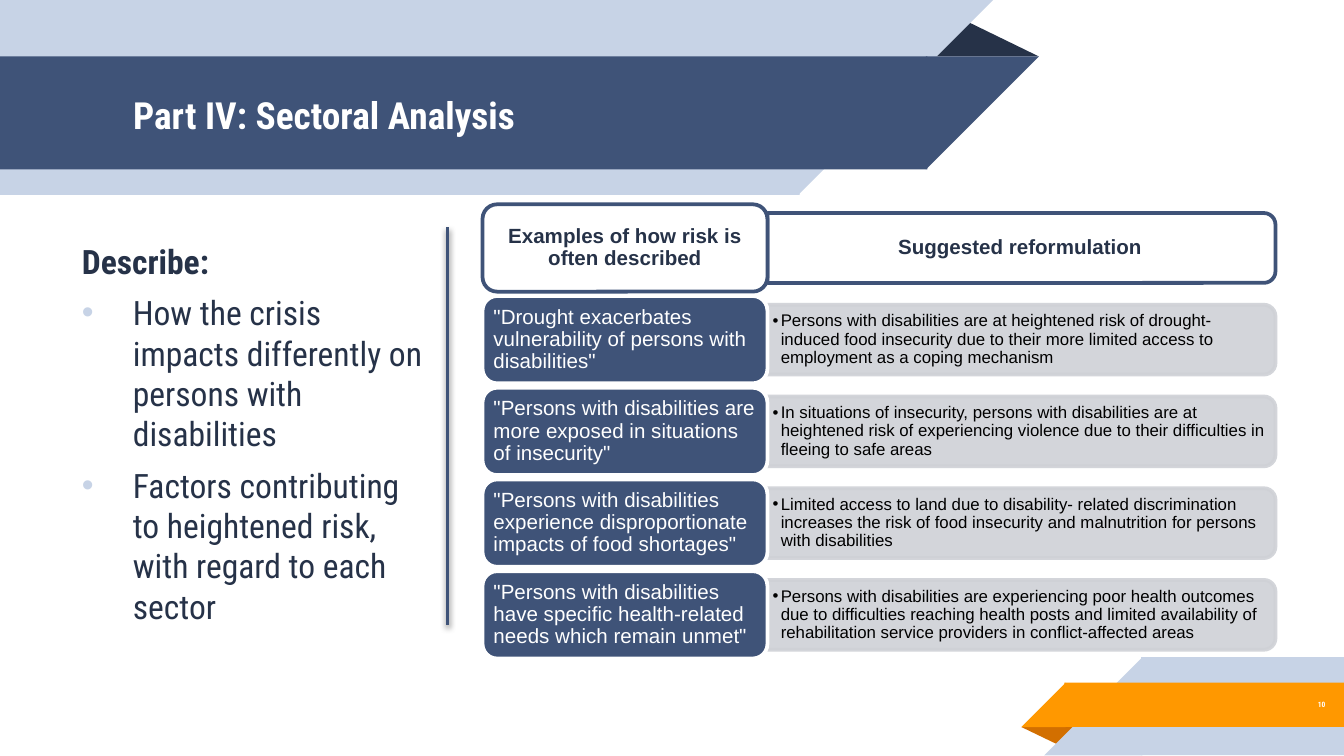
from dataclasses import dataclass

from pptx import Presentation
from pptx.dml.color import RGBColor
from pptx.enum.shapes import MSO_CONNECTOR, MSO_SHAPE as Shape
from pptx.enum.text import MSO_ANCHOR as Anchor, PP_ALIGN as Align
from pptx.oxml.ns import qn
from pptx.util import Inches, Pt
from lxml.etree import SubElement


@dataclass(frozen=True)
class Theme:
    navy: str = "3F5378"
    ink: str = "263248"
    pale: str = "C7D3E6"
    orange: str = "FF9800"
    rust: str = "D26F00"
    grey: str = "CFD1D6"
    white: str = "FFFFFF"
    black: str = "000000"
    heading_font: str = "Roboto Condensed"
    table_font: str = "Arial"
    title_size: float = 20
    body_size: float = 18
    label_size: float = 11
    detail_size: float = 9
    number_size: float = 4


THEME = Theme()
HEADERS = ("Examples of how risk is often described", "Suggested reformulation")
ROWS = [
    ('"Drought exacerbates vulnerability of persons with disabilities"',
     "Persons with disabilities are at heightened risk of drought-induced food insecurity "
     "due to their more limited access to employment as a coping mechanism"),
    ('"Persons with disabilities are more exposed in situations of insecurity"',
     "In situations of insecurity, persons with disabilities are at heightened risk of "
     "experiencing violence due to their difficulties in fleeing to safe areas"),
    ('"Persons with disabilities experience disproportionate impacts of food shortages"',
     "Limited access to land due to disability- related discrimination increases the risk of "
     "food insecurity and malnutrition for persons with disabilities"),
    ('"Persons with disabilities have specific health-related needs which remain unmet"',
     "Persons with disabilities are experiencing poor health outcomes due to difficulties "
     "reaching health posts and limited availability of rehabilitation service providers "
     "in conflict-affected areas"),
]
POINTS = ["How the crisis impacts differently on persons with disabilities",
          "Factors contributing to heightened risk, with regard to each sector"]


def add_block(page, kind, box, fill, line=None, rotation=0):
    block = page.shapes.add_shape(kind, *map(Inches, box))
    block.shadow.inherit = False
    block.rotation = rotation
    block.fill.solid()
    block.fill.fore_color.rgb = RGBColor.from_string(fill)
    if line:
        block.line.color.rgb = RGBColor.from_string(line)
        block.line.width = Pt(2)
    else:
        block.line.fill.background()
    return block


def add_text_box(page, box):
    return page.shapes.add_textbox(*map(Inches, box))


def prepare_frame(shape, across, down, anchor=Anchor.MIDDLE):
    frame = shape.text_frame
    frame.word_wrap = True
    frame.vertical_anchor = anchor
    frame.margin_left = frame.margin_right = Inches(across)
    frame.margin_top = frame.margin_bottom = Inches(down)
    return frame


def write(para, text, font, size, color, bold=False, align=Align.LEFT, spacing=1.0):
    para.text = text
    para.alignment = align
    para.line_spacing = spacing
    para.font.name = font
    para.font.size = Pt(size)
    para.font.bold = bold
    para.font.color.rgb = RGBColor.from_string(color)


def add_bullet(para, color, left, hanging):
    props = para._p.get_or_add_pPr()
    props.set("marL", str(Inches(left)))
    props.set("indent", str(-Inches(hanging)))
    SubElement(SubElement(props, qn("a:buClr")), qn("a:srgbClr"), val=color)
    SubElement(props, qn("a:buFont"), typeface="Arial")
    SubElement(props, qn("a:buChar"), char="•")


def add_band(page, box, fill, slant_left=False):
    """A rectangle with a square slanted end on its right or left."""
    left, top, width, height = box
    overlap = 0.01  # hides the seam between the two parts
    start = left - overlap if slant_left else left
    add_block(page, Shape.RECTANGLE, (start, top, width + overlap, height), fill)
    tip = left - height if slant_left else left + width
    add_block(page, Shape.RIGHT_TRIANGLE, (tip, top, height, height), fill,
              rotation=270 if slant_left else 90)


def add_banner(page, box):
    left, top, width, height = box
    fold = add_block(page, Shape.ISOSCELES_TRIANGLE,
                     (left + 6.88, top + 0.14, 0.85, 0.28), THEME.ink)
    fold.adjustments[0] = 0.324
    add_band(page, (left, top, width - height, height), THEME.pale)
    add_band(page, (left, top + 0.42, 6.89, 0.84), THEME.navy)
    title = page.shapes.title
    title.left, title.top, title.width, title.height = map(
        Inches, (left + 0.89, top + 0.43, 5.75, 0.84))
    frame = prepare_frame(title, 0.1, 0.1)
    write(frame.paragraphs[0], "Part IV: Sectoral Analysis", THEME.heading_font,
          THEME.title_size, THEME.white, bold=True)


def add_corner(page, box):
    left, top, width, height = box
    fold = add_block(page, Shape.ISOSCELES_TRIANGLE,
                     (left, top + 0.52, 0.43, 0.14), THEME.rust, rotation=180)
    fold.adjustments[0] = 0.324
    add_band(page, (left + 0.9, top, width - 0.9, height), THEME.pale, slant_left=True)
    add_band(page, (left + 0.33, top + 0.19, width - 0.33, 0.33), THEME.orange,
             slant_left=True)
    number = add_text_box(page, (left + 0.73, top + 0.18, 1.63, 0.35))
    write(prepare_frame(number, 0.1, 0.1).paragraphs[0], "10", THEME.heading_font,
          THEME.number_size, THEME.white, bold=True, align=Align.RIGHT, spacing=0.9)


def add_description(page, box):
    frame = prepare_frame(add_text_box(page, box), 0.1, 0.1, Anchor.TOP)
    heading = frame.paragraphs[0]
    heading._p.get_or_add_pPr().set("marL", str(Inches(0.12)))
    write(heading, "Describe:", THEME.heading_font, THEME.body_size, THEME.ink, bold=True)
    for point in POINTS:
        para = frame.add_paragraph()
        add_bullet(para, THEME.pale, 0.5, 0.38)
        write(para, point, THEME.heading_font, THEME.body_size, THEME.ink)
        para.space_before = Pt(6)


def add_divider(page, x, top, bottom):
    rule = page.shapes.add_connector(MSO_CONNECTOR.STRAIGHT,
                                     *map(Inches, (x, top, x, bottom)))
    rule.line.color.rgb = RGBColor.from_string(THEME.navy)
    rule.line.width = Pt(2)
    effects = SubElement(rule._element.spPr, qn("a:effectLst"))
    shadow = SubElement(effects, qn("a:outerShdw"), blurRad=str(Pt(3.1)),
                        dist=str(Pt(1.6)), dir="5400000", rotWithShape="0")
    color = SubElement(shadow, qn("a:srgbClr"), val=THEME.black)
    SubElement(color, qn("a:alpha"), val="38000")


def add_row(page, box, label, detail, header=False):
    left, top, width, height = box
    label_width, pill_height = 2.12, 0.52
    pill_width = width - label_width
    pill_left, middle = left + label_width, top + height / 2

    # Reformulation: an upright shape turned so its round corners face right
    pill_box = (pill_left + (pill_width - pill_height) / 2, middle - pill_width / 2,
                pill_height, pill_width)
    pill = add_block(page, Shape.ROUND_2_SAME_RECTANGLE, pill_box,
                     THEME.white if header else THEME.grey,
                     THEME.navy if header else THEME.grey, rotation=90)
    if not header:
        for color in pill._element.spPr.iter(qn("a:srgbClr")):
            SubElement(color, qn("a:alpha"), val="90000")
    text_box = add_text_box(page, (pill_left, middle - 0.235, pill_width - 0.02, 0.47))
    para = prepare_frame(text_box, 0.04, 0.02).paragraphs[0]
    if not header:
        add_bullet(para, THEME.black, 0.06, 0.06)
    write(para, detail, THEME.table_font,
          THEME.label_size if header else THEME.detail_size,
          THEME.ink if header else THEME.black, bold=header,
          align=Align.CENTER if header else Align.LEFT, spacing=0.9)

    # Risk wording
    card = add_block(page, Shape.ROUNDED_RECTANGLE, (left, top, label_width, height),
                     THEME.white if header else THEME.navy,
                     THEME.navy if header else THEME.white)
    write(prepare_frame(card, 0.05, 0.02).paragraphs[0], label, THEME.table_font,
          THEME.label_size, THEME.ink if header else THEME.white, bold=header,
          align=Align.CENTER if header else Align.LEFT, spacing=0.9)


def add_comparison(page, box):
    left, top, width, height = box
    row_height = 0.65
    pitch = (height - row_height) / len(ROWS)
    for index, (label, detail) in enumerate([HEADERS, *ROWS]):
        add_row(page, (left, top + index * pitch, width, row_height), label, detail,
                header=index == 0)


def main():
    deck = Presentation()
    deck.slide_width = Inches(10)
    deck.slide_height = deck.slide_width * 9 // 16
    page = deck.slides.add_slide(deck.slide_layouts[5])
    # Bring the title in front of the banner
    title_element = page.shapes.title._element
    add_banner(page, (0, 0, 7.39, 1.45))
    page.shapes._spTree.append(title_element)
    add_corner(page, (7.6, 4.89, 2.4, 0.73))
    add_description(page, (0.39, 1.69, 2.89, 3.21))
    add_divider(page, 3.33, 1.69, 4.65)
    add_comparison(page, (3.59, 1.52, 5.9, 3.38))
    deck.save("out.pptx")


if __name__ == "__main__":
    main()
